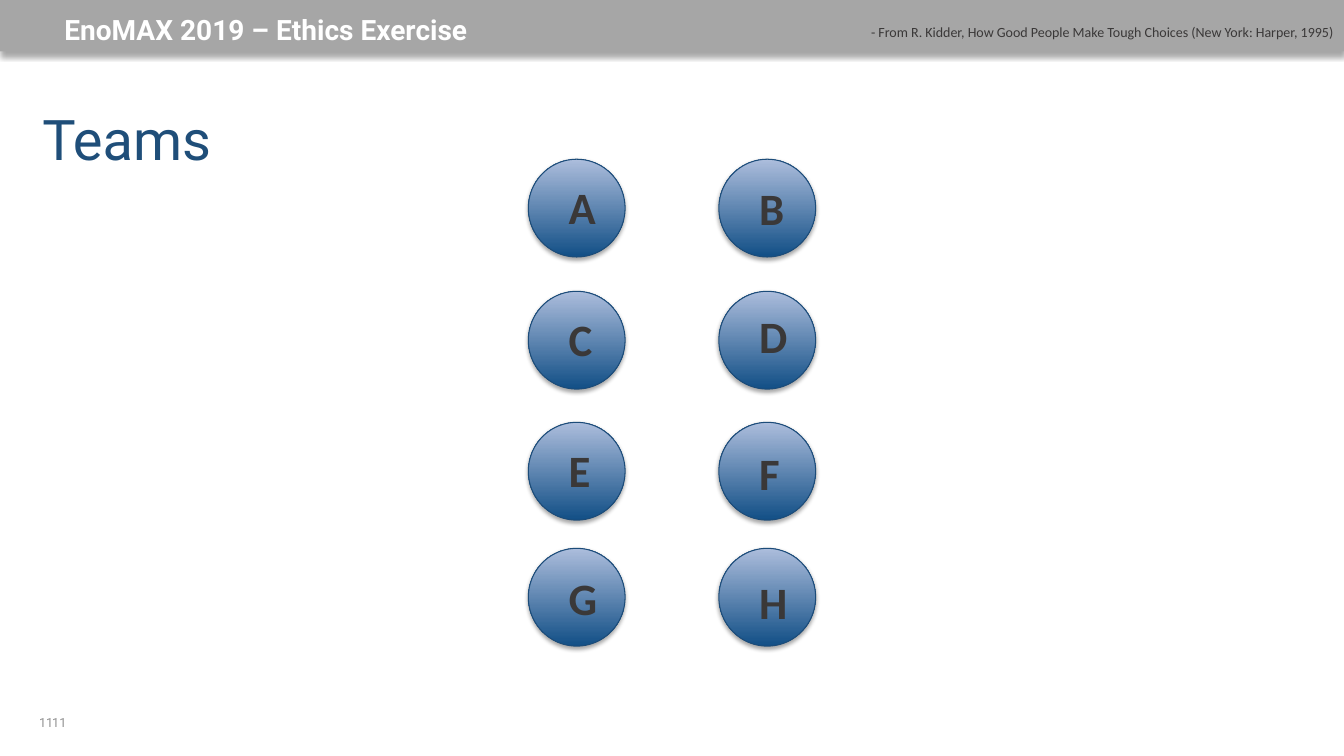
from lxml.etree import SubElement
from pptx import Presentation
from pptx.dml.color import RGBColor
from pptx.enum.shapes import MSO_SHAPE as Preset
from pptx.enum.text import MSO_ANCHOR as Anchor, PP_ALIGN as Align
from pptx.oxml.ns import qn
from pptx.util import Inches, Pt

# Content
HEADER = "EnoMAX 2019 – Ethics Exercise"
CITATION = "- From R. Kidder, How Good People Make Tough Choices (New York: Harper, 1995)"
TITLE = "Teams"
PAGE_NUMBER = "11"
# Each row: circle top, then (letter, drop of its box below the circle top)
TEAM_ROWS = [
    (1.58, [("A", 0.15), ("B", 0.16)]),
    (2.89, [("C", 0.15), ("D", 0.12)]),
    (4.19, [("E", 0.15), ("F", 0.18)]),
    (5.44, [("G", 0.17), ("H", 0.21)]),
]

# Layout in inches
WIDTH, HEIGHT = 13.33, 7.5
FIRST_COLUMN, COLUMN_STEP = 5.24, 1.89
CIRCLE_SIZE = (0.96, 0.97)
LETTER_INDENT, LETTER_SIZE = 0.3, (0.35, 0.64)
PAGE_NUMBER_LEFTS = (0.42, 0.29)

COLORS = {
    "bar": "A6A6A6", "title": "1F4E79", "white": "FFFFFF", "dark": "3A3838",
    "number": "919191", "circle_bottom": "124F86", "circle_top": "ACBDDC",
    "circle_line": "1C4C79", "shadow": "000000",
}

# Text formats
NUMBER_FONT = {"name": "Roboto", "size": Pt(9), "color": "number"}
TITLE_FONT = {"name": "Roboto", "size": Pt(40), "color": "title"}
HEADER_FONT = {"name": "Roboto", "size": Pt(20), "color": "white", "bold": True}
CITATION_FONT = {"name": "Calibri", "size": Pt(10), "color": "dark"}
LETTER_FONT = {"name": "Calibri", "size": Pt(32), "color": "dark", "bold": True}


def color(name):
    return RGBColor.from_string(COLORS[name])


def add_text(slide, text, box, font, align=Align.LEFT, anchor=Anchor.TOP,
             insets=(0.1, 0.05), line_spacing=None):
    frame = slide.shapes.add_textbox(*map(Inches, box)).text_frame
    frame.word_wrap = True
    frame.vertical_anchor = anchor
    frame.margin_left = frame.margin_right = Inches(insets[0])
    frame.margin_top = frame.margin_bottom = Inches(insets[1])
    paragraph = frame.paragraphs[0]
    paragraph.alignment = align
    paragraph.line_spacing = line_spacing
    run = paragraph.add_run()
    run.text = text
    for attribute, value in font.items():
        if attribute == "color":
            run.font.color.rgb = color(value)
        else:
            setattr(run.font, attribute, value)


def add_shape(slide, preset, box, blur, distance):
    """Add a preset shape with a soft shadow straight below it."""
    shape = slide.shapes.add_shape(preset, *map(Inches, box))
    shape.shadow.inherit = False
    effects = shape._element.spPr.find(qn("a:effectLst"))
    shadow = SubElement(effects, qn("a:outerShdw"), blurRad=str(Pt(blur)),
                        dist=str(Pt(distance)), dir="5400000", rotWithShape="0")
    shade = SubElement(shadow, qn("a:srgbClr"), val=COLORS["shadow"])
    SubElement(shade, qn("a:alpha"), val="35000")
    return shape


def add_circle(slide, left, top):
    circle = add_shape(slide, Preset.OVAL, (left, top, *CIRCLE_SIZE), 3.1, 1.8)
    circle.fill.gradient()
    circle.fill.gradient_angle = 90
    for stop, name in zip(circle.fill.gradient_stops, ("circle_bottom", "circle_top")):
        stop.color.rgb = color(name)
    circle.line.color.rgb = color("circle_line")
    circle.line.width = Pt(0.75)


def main():
    presentation = Presentation()
    presentation.slide_width, presentation.slide_height = Inches(WIDTH), Inches(HEIGHT)
    slide = presentation.slides.add_slide(presentation.slide_layouts[6])

    # Header bar
    bar = add_shape(slide, Preset.RECTANGLE, (0, 0, WIDTH, 0.51), 4.2, 3)
    bar.fill.solid()
    bar.fill.fore_color.rgb = color("bar")
    bar.line.fill.background()

    # Page numbers, title, header and citation
    for left in PAGE_NUMBER_LEFTS:
        add_text(slide, PAGE_NUMBER, (left, 6.97, 3, 0.4), NUMBER_FONT, anchor=Anchor.MIDDLE)
    add_text(slide, TITLE, (0.29, 0.84, 12.75, 1.06), TITLE_FONT,
             anchor=Anchor.MIDDLE, insets=(0.13, 0.07))
    add_text(slide, HEADER, (0.54, 0.11, 11.54, 0.47), HEADER_FONT, line_spacing=0.9)
    add_text(slide, CITATION, (8.44, 0.18, 4.88, 0.27), CITATION_FONT, Align.RIGHT)

    # Team circles with their letters
    for top, teams in TEAM_ROWS:
        for column, (letter, drop) in enumerate(teams):
            left = FIRST_COLUMN + column * COLUMN_STEP
            add_circle(slide, left, top)
            add_text(slide, letter, (left + LETTER_INDENT, top + drop, *LETTER_SIZE),
                     LETTER_FONT, Align.CENTER)

    presentation.save("out.pptx")


if __name__ == "__main__":
    main()
